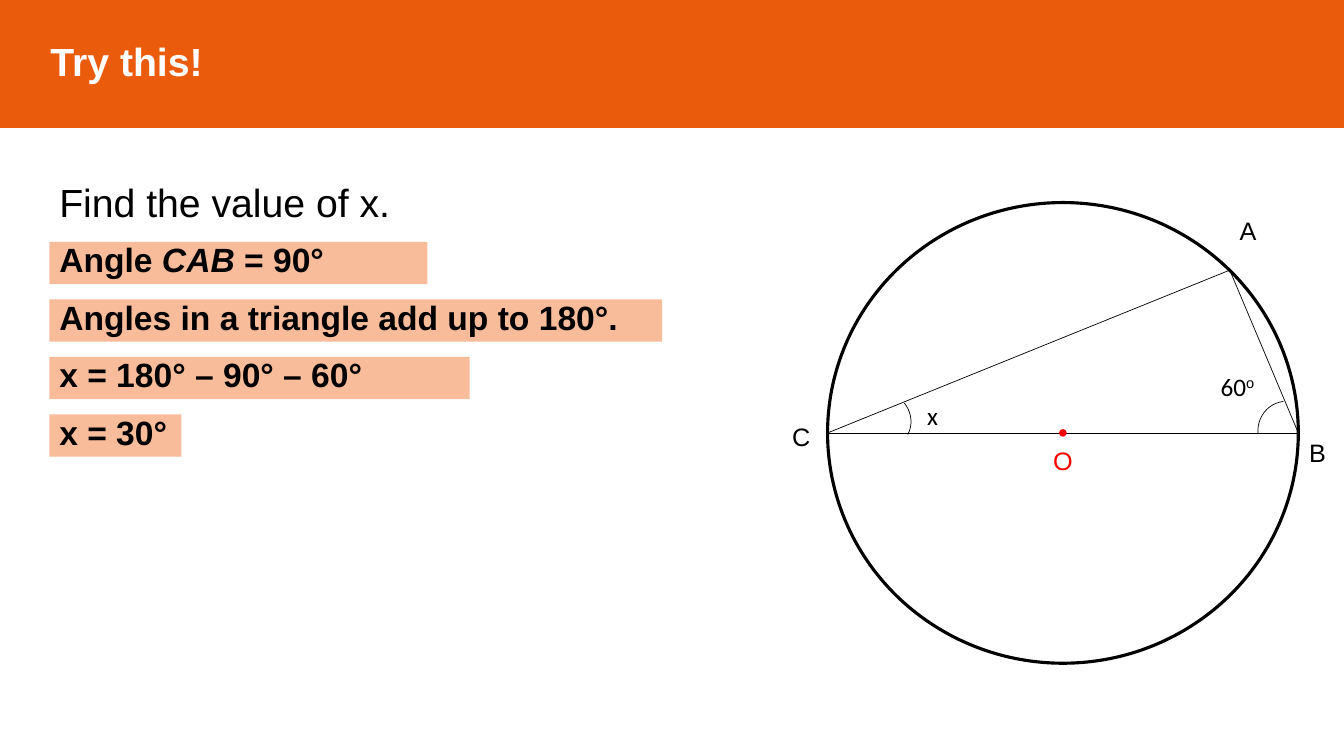
"""Build a circle theorem exercise slide with its worked answer."""
import dataclasses
import typing

import lxml.etree
import pptx
import pptx.dml.color
import pptx.enum.shapes
import pptx.enum.text
import pptx.oxml.ns
import pptx.util

COLS, ROWS = 160, 90
KIND = pptx.enum.shapes.MSO_SHAPE
ANCHOR = pptx.enum.text.MSO_ANCHOR
GROW = pptx.enum.text.MSO_AUTO_SIZE.SHAPE_TO_FIT_TEXT


@dataclasses.dataclass(frozen=True)
class Theme:
    """Colours, fonts, type sizes and line widths."""
    orange: str = "EA5B0C"
    peach: str = "F9BC9A"
    white: str = "FFFFFF"
    black: str = "000000"
    red: str = "FF0000"
    sans: str = "Arial"
    maths: str = "Calibri"
    head: int = 28
    step: int = 24
    label: int = 18
    thin: float = 0.5
    edge: float = 1
    bold: float = 2.25


THEME = Theme()


class Box(typing.NamedTuple):
    """Place and size in grid columns and rows."""
    left: float
    top: float
    width: float
    height: float


class Piece(typing.NamedTuple):
    """A stretch of text with its own style."""
    text: str
    slant: bool = False
    raised: bool = False


class Style(typing.NamedTuple):
    """Font settings of a paragraph."""
    size: int
    colour: str = THEME.black
    bold: bool = False
    face: str = THEME.sans


class Label(typing.NamedTuple):
    """A text box on the slide."""
    box: Box
    pieces: tuple[Piece, ...]
    style: Style


class Step(typing.NamedTuple):
    """One line of the worked answer."""
    width: float
    pieces: tuple[Piece, ...]


class Arc(typing.NamedTuple):
    """An angle mark."""
    left: float
    top: float
    turn: float
    start: float


deck = pptx.Presentation()
deck.slide_width = pptx.util.Inches(13.33)
deck.slide_height = pptx.util.Inches(7.5)
slide = deck.slides.add_slide(deck.slide_layouts[6])


def across(cols: float) -> int:
    """Turn grid columns into a length."""
    return round(deck.slide_width * cols / COLS)


def down(rows: float) -> int:
    """Turn grid rows into a length."""
    return round(deck.slide_height * rows / ROWS)


def place(box: Box) -> tuple[int, int, int, int]:
    """Turn a grid box into lengths."""
    return across(box.left), down(box.top), across(box.width), down(box.height)


def paint(colour: str) -> pptx.dml.color.RGBColor:
    """Read a hex colour."""
    return pptx.dml.color.RGBColor.from_string(colour)


def draw(kind: KIND, box: Box, fill: str = "", line: str = "", width: float = THEME.edge):
    """Add a preset shape; an empty colour means none."""
    shape = slide.shapes.add_shape(kind, *place(box))
    shape.shadow.inherit = False
    if fill:
        shape.fill.solid()
        shape.fill.fore_color.rgb = paint(fill)
    else:
        shape.fill.background()
    if line:
        shape.line.color.rgb = paint(line)
        shape.line.width = pptx.util.Pt(width)
    else:
        shape.line.fill.background()
    return shape


def write(shape, pieces: tuple[Piece, ...], style: Style, anchor: ANCHOR = ANCHOR.TOP):
    """Put one left-aligned paragraph in a shape."""
    frame = shape.text_frame
    frame.word_wrap = True
    frame.vertical_anchor = anchor
    para = frame.paragraphs[0]
    para.alignment = pptx.enum.text.PP_ALIGN.LEFT
    para.font.size = pptx.util.Pt(style.size)
    para.font.name = style.face
    para.font.bold = style.bold
    para.font.color.rgb = paint(style.colour)
    for piece in pieces:
        run = para.add_run()
        run.text = piece.text
        if piece.slant:
            run.font.italic = True
        if piece.raised:
            run.font.name = THEME.sans
            run._r.get_or_add_rPr().set("baseline", "30000")
    return para


def join(start: tuple[float, float], end: tuple[float, float]) -> None:
    """Draw a thin line between two grid points."""
    line = slide.shapes.add_connector(
        pptx.enum.shapes.MSO_CONNECTOR.STRAIGHT,
        across(start[0]), down(start[1]), across(end[0]), down(end[1]))
    line.line.color.rgb = paint(THEME.black)
    line.line.width = pptx.util.Pt(THEME.thin)
    lxml.etree.SubElement(line.element.spPr, pptx.oxml.ns.qn("a:effectLst"))


def label(item: Label) -> None:
    """Add a text box."""
    shape = slide.shapes.add_textbox(*place(item.box))
    write(shape, item.pieces, item.style)
    shape.text_frame.auto_size = GROW


def main() -> None:
    """Draw the slide and save it."""
    banner = draw(KIND.RECTANGLE, Box(0, -0.72, COLS, 15.84), THEME.orange, THEME.orange)
    write(banner, (Piece("Try this!"),), Style(THEME.head, THEME.white, True), ANCHOR.MIDDLE)
    banner.text_frame.margin_left = across(6)

    ring = Box(98.52, 24.12, 56.04, 54.84)
    draw(KIND.OVAL, ring, THEME.white, THEME.black, THEME.bold)
    mid = ring.left + ring.width / 2, ring.top + ring.height / 2
    a, b, c = (146.4, 32.16), (ring.left + ring.width, mid[1]), (ring.left, mid[1])
    for start, end in ((c, b), (c, a), (b, a)):
        join(start, end)
    dot = 0.72
    draw(KIND.OVAL, Box(mid[0] - dot / 2, mid[1] - dot / 2, dot, dot), THEME.red, THEME.red)

    for arc in (Arc(149.64, 47.88, 263.6, 162), Arc(101.4, 46.68, 27.4, 176.97)):
        mark = draw(KIND.ARC, Box(arc.left, arc.top, 7.08, 6.84), "", THEME.black, THEME.thin)
        mark.rotation = arc.turn
        mark.adjustments[0] = arc.start

    plain = Style(THEME.label)
    maths = Style(THEME.label, face=THEME.maths)
    for item in (
        Label(Box(146.4, 25.08, 5.4, 4.8), (Piece("A"),), plain),
        Label(Box(154.68, 51.48, 5.4, 4.8), (Piece("B"),), plain),
        Label(Box(124.2, 52.44, 5.4, 4.8), (Piece("O"),), Style(THEME.label, THEME.red)),
        Label(Box(93.12, 49.56, 5.4, 4.8), (Piece("C"),), plain),
        Label(Box(144.12, 43.56, 7.68, 4.8), (Piece("60"), Piece("o", raised=True)), maths),
        Label(Box(109.2, 47.04, 7.68, 4.8), (Piece("x"),), maths),
        Label(Box(5.88, 20.64, 55.08, 6.84), (Piece("Find the value of x."),), Style(THEME.head)),
    ):
        label(item)

    steps = (
        Step(45, (Piece("Angle "), Piece("CAB ", slant=True), Piece("= 90°"))),
        Step(72.96, (Piece("Angles in a triangle add up to 180°."),)),
        Step(50.04, (Piece("x = 180° – 90° – 60°"),)),
        Step(15.72, (Piece("x = 30°"),)),
    )
    for row, step in enumerate(steps):
        bar = draw(KIND.RECTANGLE, Box(5.88, 28.8 + 6.84 * row, step.width, 5.04), THEME.peach)
        para = write(bar, step.pieces, Style(THEME.step, bold=True))
        para.line_spacing = 0.8
        bar.text_frame.auto_size = GROW

    deck.save("out.pptx")


if __name__ == "__main__":
    main()
